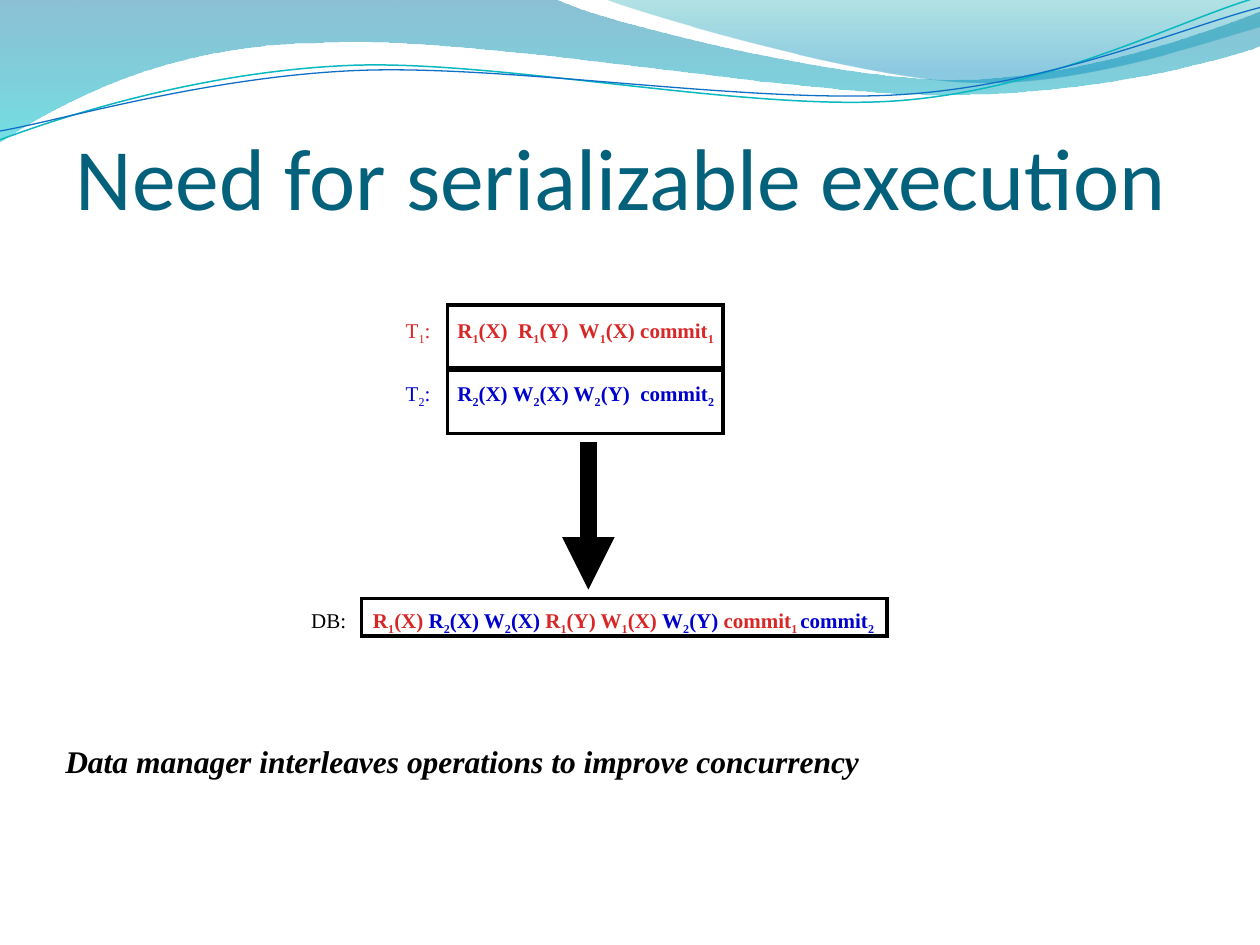
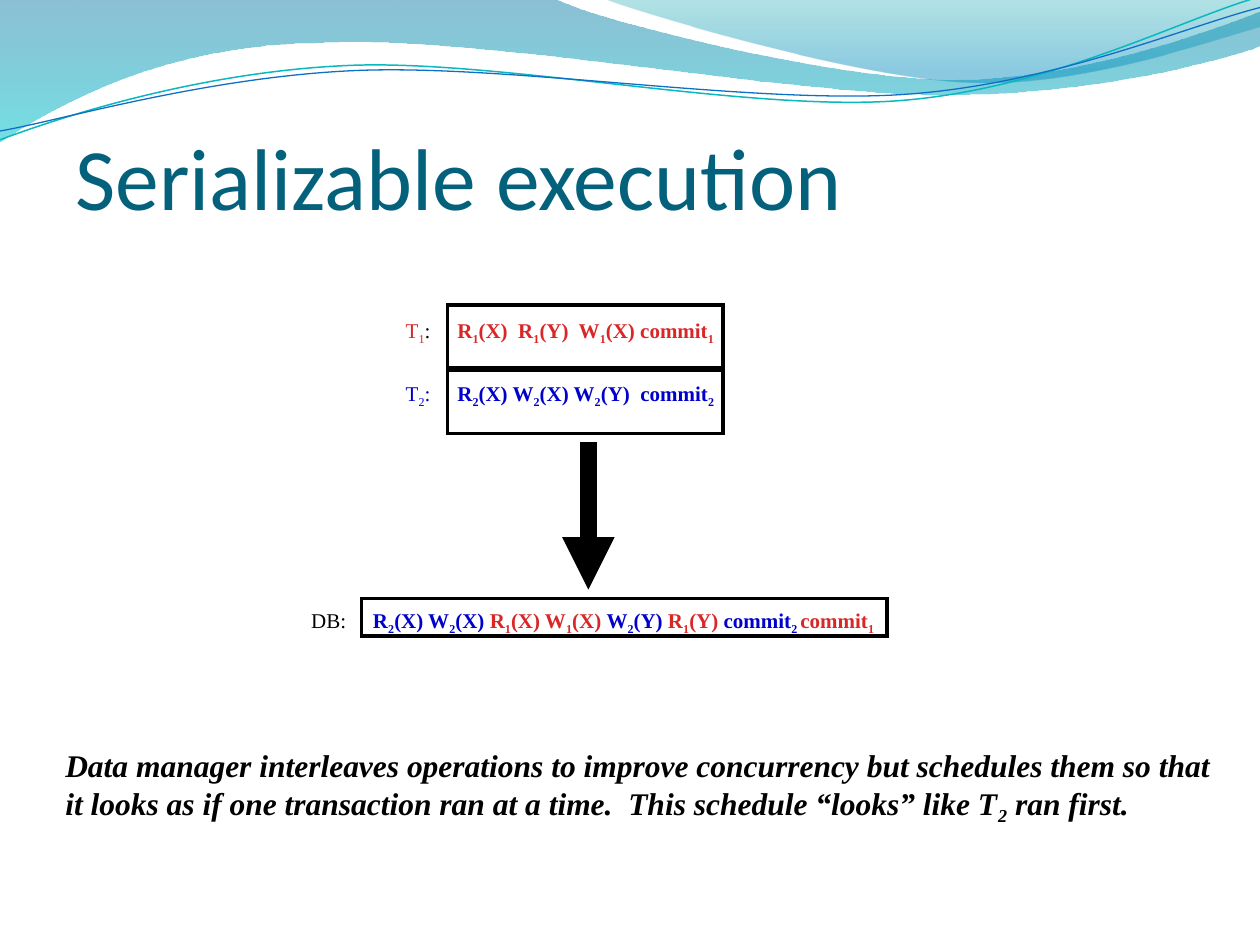
from itertools import groupby

from lxml.etree import SubElement
from pptx import Presentation
from pptx.dml.color import RGBColor
from pptx.enum.shapes import MSO_CONNECTOR, MSO_SHAPE
from pptx.enum.text import MSO_ANCHOR, PP_ALIGN
from pptx.oxml.ns import qn
from pptx.util import Inches, Pt

COLORS = {
    "title": "04617B", "black": "000000", "first": "D92727", "second": "0000CC",
    "teal_line": "0AB8BF", "blue_line": "0F6FC6",
    "wave_top": "0074A1", "wave_bottom": "00C6CF",
    "crest_top": "00A1A9", "crest_bottom": "008BBF",
}
BODY = {"name": "Times New Roman", "size": Pt(12)}
STRONG = {**BODY, "bold": True}
NOTE = {"name": "Times New Roman", "size": Pt(18), "bold": True, "italic": True}
TITLE = {"name": "Calibri", "size": Pt(50)}

BANDS = [
    ([(0, -0.01), (4.4, -0.01), (4.76, 0.17, 6.64, 0.63, 7.58, 0.63),
      (8.53, 0.63, 9.58, 0.26, 10, 0.09), (10.01, 0.36),
      (9.83, 0.44, 8.7, 0.76, 7.46, 0.75), (6.22, 0.75, 3.82, 0.28, 2.57, 0.34),
      (1.29, 0.35, 0.46, 0.83, -0.01, 1.13), (0, -0.01)],
     [(0, "wave_top", 45), (1, "wave_bottom", 55)]),
    ([(4.79, -0.01), (5.09, 0.11, 6.82, 0.62, 7.69, 0.65),
      (8.56, 0.69, 9.61, 0.32, 10, 0.21), (10, 0), (4.79, -0.01)],
     [(0, "crest_top", 30), (0.8, "crest_bottom", 45)]),
]
STRANDS = [
    ([(0, 1.11), (0.48, 0.93, 1.58, 0.57, 2.77, 0.52),
      (3.95, 0.47, 5.93, 0.89, 7.13, 0.8), (8.33, 0.71, 9.38, 0.15, 9.98, -0.02)],
     "teal_line", 0.85),
    ([(0, 1.04), (0.47, 0.96, 1.64, 0.61, 2.83, 0.56),
      (4.03, 0.51, 5.97, 0.83, 7.17, 0.75), (8.36, 0.67, 9.41, 0.21, 10, 0.06)],
     "blue_line", 0.75),
]
TRANSACTIONS = [["R1(X)  R1(Y)  W1(X) commit1"], ["R2(X) W2(X) W2(Y)  commit2"]]
PAGES = [
    {"title": "Need for serializable execution",
     "labels": [[("T1:\t", "first")], [("T2:\t", "second")]],
     "schedule": ["R1(X) ", "R2(X) W2(X) ", "R1(Y) W1(X) ", "W2(Y) ",
                  "commit1 ", "commit2"],
     "note": "Data manager interleaves operations to improve concurrency",
     "note_box": (0.42, 5.84, 9.33, 0.5)},
    {"title": "Serializable execution",
     "labels": [[("T1", "first"), (":\t", "black")], [("T2:\t", "second")]],
     "schedule": ["R2(X) W2(X) ", "R1(X) W1(X) ", "W2(Y) ", "R1(Y) ",
                  "commit2 ", "commit1"],
     "note": "Data manager interleaves operations to improve concurrency but "
             "schedules them so that it looks as if one transaction ran at a time.  "
             "This schedule “looks” like T2 ran first.",
     "note_box": (0.42, 5.87, 9.33, 1.3)},
]


def rgb(color):
    """Look up a named colour."""
    return RGBColor.from_string(COLORS[color])


def inches(box):
    """Turn a tuple of numbers into lengths."""
    return [Inches(value) for value in box]


def add_text(para, text, color, style):
    """Add text with subscript numbers; a space that ends it stays with its number."""
    def is_low(index):
        """Tell whether the letter at an index is a subscript."""
        number = text[:index + 1]
        return (number.rstrip() if number == text else number)[-1:].isdigit()

    for low, places in groupby(range(len(text)), is_low):
        span = para.add_run()
        span.text = "".join(text[place] for place in places)
        for key, value in style.items():
            setattr(span.font, key, value)
        span.font.color.rgb = rgb(color)
        if low:
            span.font._element.set("baseline", "-25000")


def add_box(page, box, margins):
    """Add a wrapping text box and return its frame."""
    frame = page.shapes.add_textbox(*inches(box)).text_frame
    frame.word_wrap = True
    sides = ("margin_left", "margin_top", "margin_right", "margin_bottom")
    for side, margin in zip(sides, margins):
        setattr(frame, side, Inches(margin))
    return frame


def add_outline(page, outline, close):
    """Draw an outline of straight and cubic pieces as a freeform."""
    points = [inches(piece[at:at + 2]) for piece in outline
              for at in range(0, len(piece), 2)]
    builder = page.shapes.build_freeform(*points[0])
    builder.add_line_segments(points[1:], close=close)
    shape = builder.convert_to_shape()
    shape.shadow.inherit = False
    nodes = iter(list(shape.element.iter(qn("a:lnTo"))))
    for piece in outline[1:]:
        node = next(nodes)
        if len(piece) == 6:
            node.addprevious(curve := node.makeelement(qn("a:cubicBezTo")))
            for corner in (node, next(nodes), next(nodes)):
                curve.append(corner[0])
                corner.getparent().remove(corner)
    return shape


def add_band(page, outline, stops):
    """Draw a translucent gradient band."""
    shape = add_outline(page, outline, True)
    shape.line.fill.background()
    shape.fill.gradient()
    shape.fill.gradient_angle = 270
    for stop, (position, color, _) in zip(shape.fill.gradient_stops, stops):
        stop.position = position
        stop.color.rgb = rgb(color)
    for node, (_, _, opacity) in zip(shape.element.iter(qn("a:srgbClr")), stops):
        SubElement(node, qn("a:alpha"), val=str(opacity * 1000))
    return shape


def add_strand(page, outline, color, width):
    """Draw a thin curved line."""
    shape = add_outline(page, outline, False)
    shape.fill.background()
    shape.line.color.rgb = rgb(color)
    shape.line.width = Pt(width)
    return shape


def add_waves(page, layout):
    """Draw the waves and hand them to the layout, behind its placeholders."""
    waves = [add_band(page, *band) for band in BANDS]
    waves += [add_strand(page, *strand) for strand in STRANDS]
    for index, wave in enumerate(waves, 2):
        layout.shapes.element.insert(index, wave.element)


def add_title(page, text, box):
    """Place and format the title."""
    title = page.shapes.title
    title.left, title.top, title.width, title.height = inches(box)
    frame = title.text_frame
    frame.vertical_anchor = MSO_ANCHOR.MIDDLE
    para = frame.paragraphs[0]
    para.alignment = PP_ALIGN.LEFT
    add_text(para, text, "title", TITLE)


def add_row(page, box, label, operations, gutter, drop, pad, text_height):
    """Draw a framed row of operations with its label in the left gutter."""
    left, top, width, height = box
    frame = page.shapes.add_shape(MSO_SHAPE.RECTANGLE, *inches(box))
    frame.shadow.inherit = False
    frame.fill.background()
    frame.line.color.rgb = rgb("black")
    frame.line.width = Pt(2)
    SubElement(frame.line._get_or_add_ln(), qn("a:miter"), lim="800000")

    inset = 0.05
    text_box = (left - gutter, top + drop, gutter + width + 0.13, text_height)
    para = add_box(page, text_box, (inset, 0.01, 0.01, 0.01)).paragraphs[0]
    tabs = SubElement(para._p.get_or_add_pPr(), qn("a:tabLst"))
    SubElement(tabs, qn("a:tab"), pos=str(Inches(gutter + pad - inset)), algn="l")
    for text, color in label:
        add_text(para, text, color, BODY)
    for chunk in operations:
        add_text(para, chunk, "second" if "2" in chunk else "first", STRONG)


def add_arrow(page, x, top, bottom):
    """Draw the heavy downward arrow."""
    arrow = page.shapes.add_connector(
        MSO_CONNECTOR.STRAIGHT, *inches((x, top, x, bottom)))
    arrow.line.color.rgb = rgb("black")
    arrow.line.width = Pt(10)
    SubElement(arrow.line._get_or_add_ln(), qn("a:tailEnd"), type="triangle")
    SubElement(arrow.element.spPr, qn("a:effectLst"))


def add_diagram(page, left, top, labels, schedule):
    """Show both transactions flowing into the database schedule."""
    add_row(page, (left, top + 2.33, 4.17, 0.3), [("DB:\t", "black")], schedule,
            0.45, 0.06, 0.09, 0.2)
    add_arrow(page, left + 1.8, top + 1.09, top + 2.26)
    for index, (label, operations) in enumerate(zip(labels, TRANSACTIONS)):
        box = (left + 0.68, top + 0.5 * index, 2.19, 0.52)
        add_row(page, box, label, operations, 0.38, 0.09, 0.08, 0.35)


def add_note(page, text, box):
    """Write the remark below the diagram."""
    para = add_box(page, box, (0.1, 0.05, 0.1, 0.05)).paragraphs[0]
    para.space_before = Pt(9)
    add_text(para, text, "black", NOTE)


def main():
    """Build the deck."""
    deck = Presentation()
    deck.slide_width, deck.slide_height = Inches(10), Inches(7.5)
    layout = deck.slide_layouts[5]
    for index, content in enumerate(PAGES):
        page = deck.slides.add_slide(layout)
        if index == 0:
            add_waves(page, layout)
        add_title(page, content["title"], (0.5, 0.77, 9, 1.25))
        add_note(page, content["note"], content["note_box"])
        add_diagram(page, 2.87, 2.42, content["labels"], content["schedule"])
    deck.save("out.pptx")


if __name__ == "__main__":
    main()
